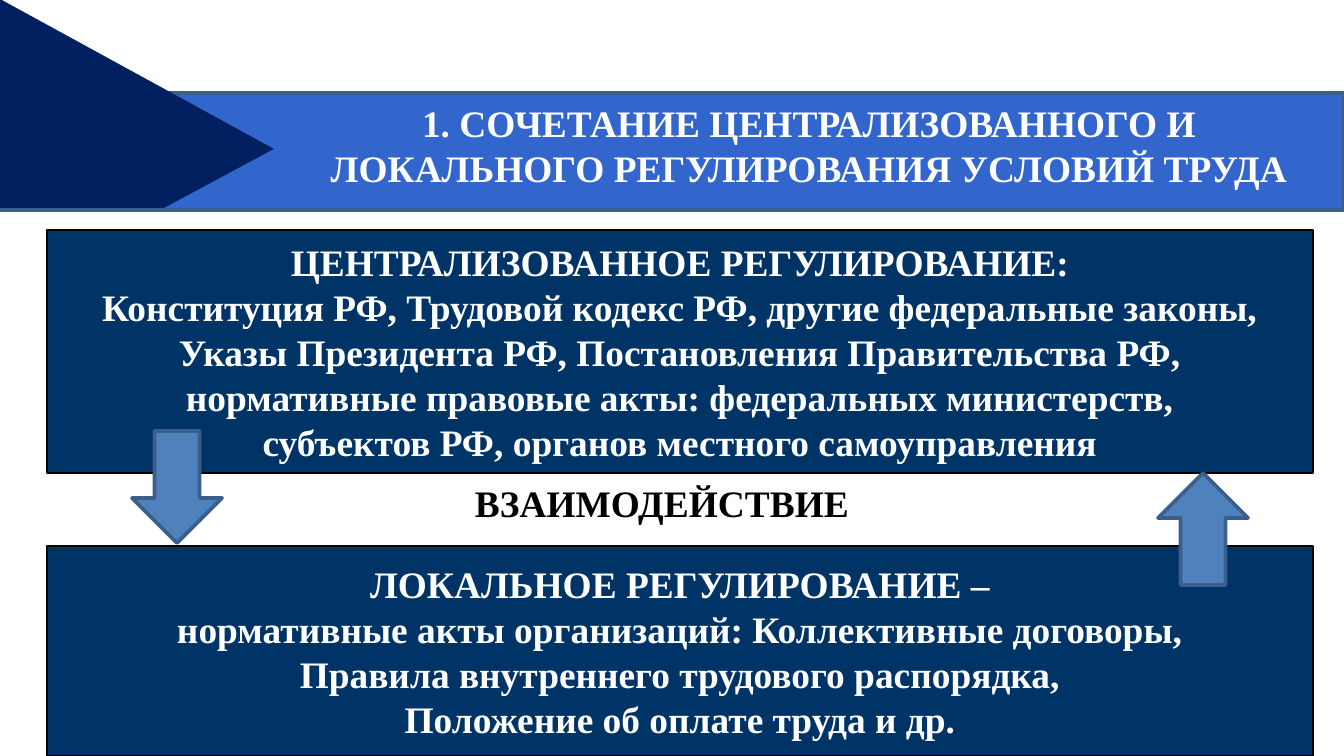
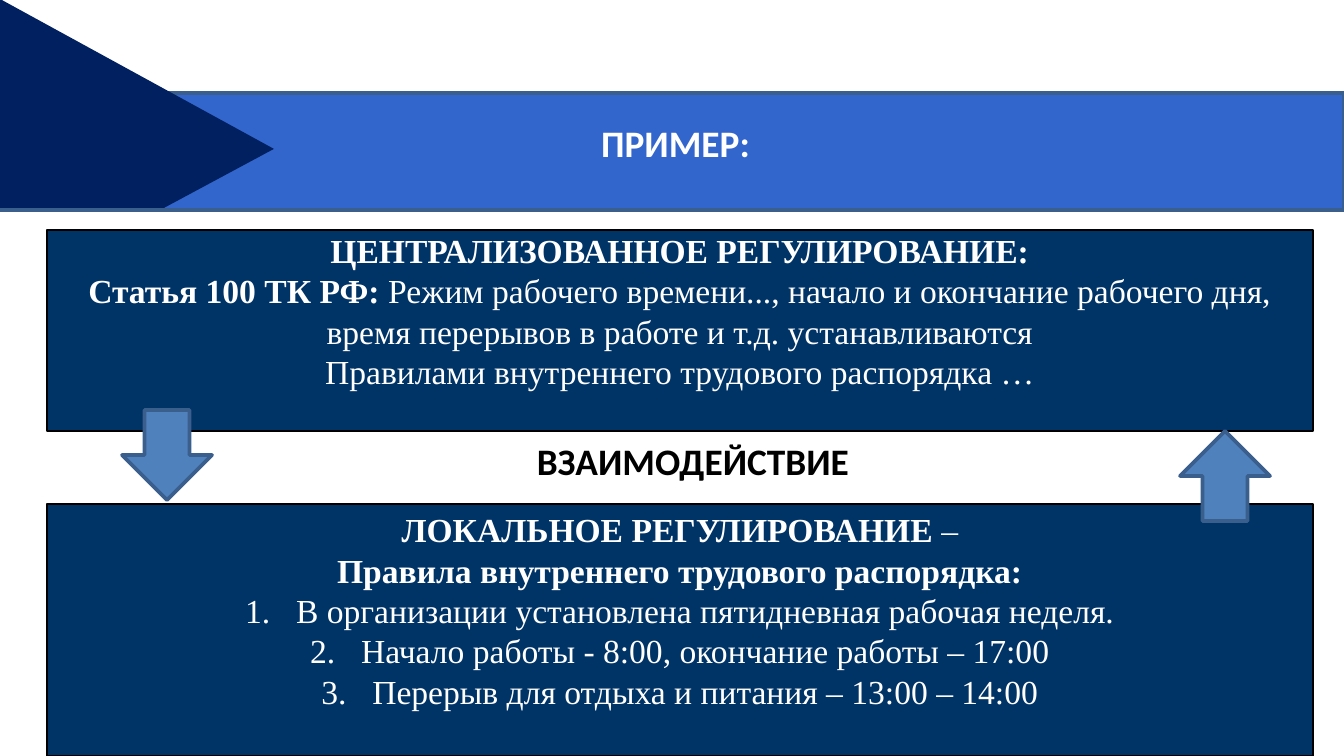
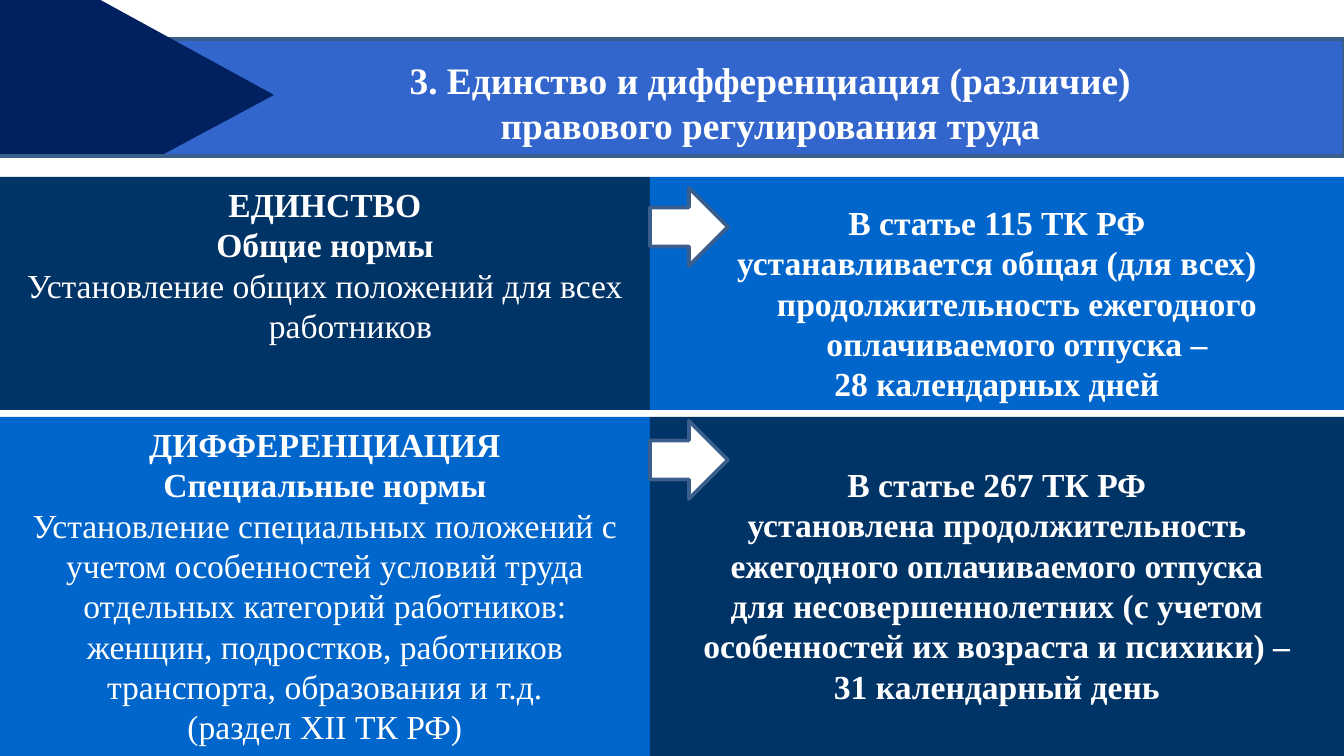
from lxml import etree
from pptx import Presentation
from pptx.dml.color import RGBColor
from pptx.enum.shapes import MSO_SHAPE
from pptx.enum.text import MSO_ANCHOR, PP_ALIGN
from pptx.oxml.ns import qn
from pptx.util import Pt

PX = 914400 / 134.4
W, H = 1344, 756

NAVY = RGBColor(0x00, 0x20, 0x60)
BAND = RGBColor(0x33, 0x66, 0xCC)
DARK = RGBColor(0x00, 0x33, 0x66)
BRIGHT = RGBColor(0x00, 0x66, 0xCC)
ARROW = RGBColor(0x4F, 0x81, 0xBD)
EDGE = RGBColor(0x3A, 0x5F, 0x8C)
WHITE = RGBColor(0xFF, 0xFF, 0xFF)
BLACK = RGBColor(0x00, 0x00, 0x00)

SERIF, SANS = "Times New Roman", "Calibri"
RECT = MSO_SHAPE.RECTANGLE
DOWN, UP, RIGHT = MSO_SHAPE.DOWN_ARROW, MSO_SHAPE.UP_ARROW, MSO_SHAPE.RIGHT_ARROW
CENTER = PP_ALIGN.CENTER
TOP, MIDDLE = MSO_ANCHOR.TOP, MSO_ANCHOR.MIDDLE


def box(s, kind, at, fill=None, line=None, width=2):
    """Add a preset shape, or a text box when kind is None."""
    at = [round(v * PX) for v in at]
    if kind is None:
        return s.shapes.add_textbox(*at)
    sp = s.shapes.add_shape(kind, *at)
    sp.shadow.inherit = False
    sp.fill.solid()
    sp.fill.fore_color.rgb = fill
    if line is None:
        sp.line.fill.background()
    else:
        sp.line.color.rgb = line
        sp.line.width = Pt(width)
    return sp


def write(sp, paras, size=20, font=SERIF, color=WHITE, anchor=TOP, wrap=True,
          hang=0, top=7, bottom=7):
    """Each paragraph is a list of (text, bold) runs; "1." first numbers it."""
    tf = sp.text_frame
    frame = {"word_wrap": wrap, "vertical_anchor": anchor,
             "margin_top": round(top * PX), "margin_bottom": round(bottom * PX)}
    for name, value in frame.items():
        setattr(tf, name, value)
    for i, runs in enumerate(paras):
        p = tf.paragraphs[0] if i == 0 else tf.add_paragraph()
        p.alignment = CENTER
        pPr = p._p.get_or_add_pPr()
        if hang:
            pPr.set("marL", str(round(hang * PX)))
            pPr.set("indent", str(round(-hang * PX)))
        if runs[0] == "1.":
            etree.SubElement(pPr, qn("a:buAutoNum"), type="arabicPeriod")
            runs = runs[1:]
        for text, bold in runs:
            r = p.add_run()
            r.text = text
            for name, value in {"name": font, "size": Pt(size), "bold": bold}.items():
                setattr(r.font, name, value)
            r.font.color.rgb = color


prs = Presentation()
prs.slide_width, prs.slide_height = round(W * PX), round(H * PX)

# Shared header: blue band with a navy wedge
slides = []
for y in (93, 93, 39):
    s = prs.slides.add_slide(prs.slide_layouts[6])
    box(s, RECT, (0, y, W, 117), BAND, EDGE)
    wedge = s.shapes.build_freeform(0, y - 94, scale=PX)
    wedge.add_line_segments([(274, y + 56), (164, y + 115), (0, y + 115)])
    sp = wedge.convert_to_shape()
    sp.shadow.inherit = False
    sp.fill.solid()
    sp.fill.fore_color.rgb = NAVY
    sp.line.fill.background()
    slides.append(s)

# Slides 1 and 2: central and local regulation, with arrows between them
regulation = [
    {
        "title": "1. СОЧЕТАНИЕ ЦЕНТРАЛИЗОВАННОГО И ЛОКАЛЬНОГО РЕГУЛИРОВАНИЯ УСЛОВИЙ ТРУДА",
        "title_at": (312, 93, 994, 103), "title_wrap": True, "font": SERIF,
        "size": 20, "margins": (7, 7), "hang": 0,
        "central": (230, 243, [
            [("ЦЕНТРАЛИЗОВАННОЕ РЕГУЛИРОВАНИЕ:", True)],
            [("Конституция РФ, Трудовой кодекс РФ, другие федеральные законы,", True)],
            [("Указы Президента РФ, Постановления Правительства РФ,", True)],
            [("нормативные правовые акты: федеральных министерств,", True)],
            [("субъектов РФ, органов местного самоуправления", True)],
        ]),
        "local": (546, 210, [
            [("ЛОКАЛЬНОЕ РЕГУЛИРОВАНИЕ –", True)],
            [("нормативные акты организаций: Коллективные договоры,", True)],
            [("Правила внутреннего трудового распорядка,", True)],
            [("Положение об оплате труда и др.", True)],
        ]),
        "link_x": 365, "down": (132, 431), "up": (1158, 473), "arrow_h": 112,
    },
    {
        "title": "ПРИМЕР:",
        "title_at": (587, 113, 177, 59), "title_wrap": False, "font": SANS,
        "size": 18, "margins": (0, 40), "hang": 51,
        "central": (230, 201, [
            [("ЦЕНТРАЛИЗОВАННОЕ РЕГУЛИРОВАНИЕ:", True)],
            [("Статья 100 ТК РФ: ", True),
             ("Режим рабочего времени..., начало и окончание рабочего дня,", False)],
            [("время перерывов в работе и т.д. устанавливаются", False)],
            [("Правилами внутреннего трудового распорядка …", False)],
        ]),
        "local": (504, 252, [
            [("ЛОКАЛЬНОЕ РЕГУЛИРОВАНИЕ", True), (" –", False)],
            [("Правила внутреннего трудового распорядка:", True)],
            ["1.", ("В организации установлена пятидневная рабочая неделя.", False)],
            ["1.", ("Начало работы - 8:00, окончание работы – 17:00", False)],
            ["1.", ("Перерыв для отдыха и питания – 13:00 – 14:00", False)],
        ]),
        "link_x": 396, "down": (122, 410), "up": (1180, 431), "arrow_h": 90,
    },
]
for s, d in zip(slides, regulation):
    write(box(s, None, d["title_at"]), [[(d["title"], True)]],
          font=d["font"], wrap=d["title_wrap"])
    for part, hang in (("central", 0), ("local", d["hang"])):
        y, h, paras = d[part]
        sp = box(s, RECT, (47, y, 1266, h), DARK, BLACK, 0.75)
        write(sp, paras, d["size"], anchor=MIDDLE, wrap=False, hang=hang,
              top=d["margins"][0], bottom=d["margins"][1])
    y, h, _ = d["central"]
    write(box(s, None, (d["link_x"], y + h, 594, 59)), [[("ВЗАИМОДЕЙСТВИЕ", True)]],
          font=d["font"], color=BLACK)
    for kind, part in ((DOWN, "down"), (UP, "up")):
        box(s, kind, (*d[part], 90, d["arrow_h"]), ARROW, EDGE)

# Slide 3: title, first line set off to the left
s = slides[2]
sp = box(s, None, (312, 50, 973, 103))
write(sp, [[("3. Единство и дифференциация (различие)", True)],
           [("правового регулирования труда", True)]], hang=40)
sp.text_frame.paragraphs[0]._p.get_or_add_pPr().set("marR", str(round(56 * PX)))

# Slide 3: two by two panels, with an arrow in each row
SPLIT = 650
panels = [
    (0, 177, 233, DARK, 51, 7, [
        [("ЕДИНСТВО", True)],
        [("Общие нормы", True)],
        [("Установление общих положений для всех работников", False)],
    ]),
    (SPLIT, 177, 233, BRIGHT, 40, 25, [
        [("В статье 115 ТК РФ", True)],
        [("устанавливается общая (для всех) продолжительность ежегодного "
          "оплачиваемого отпуска –", True)],
        [("28 календарных дней", True)],
    ]),
    (0, 417, 339, BRIGHT, 0, 7, [
        [("ДИФФЕРЕНЦИАЦИЯ", True)],
        [("Специальные нормы", True)],
        [("Установление специальных положений с учетом особенностей условий труда "
          "отдельных категорий работников:", False)],
        [("женщин, подростков, работников транспорта, образования и т.д.", False)],
        [("(раздел XII ТК РФ)", False)],
    ]),
    (SPLIT, 417, 339, DARK, 0, 47, [
        [("В статье 267 ТК РФ", True)],
        [("установлена продолжительность ежегодного оплачиваемого отпуска", True)],
        [("для несовершеннолетних (с учетом особенностей их возраста и психики) –", True)],
        [("31 календарный день", True)],
    ]),
]
for x, y, h, fill, hang, top, paras in panels:
    w = W - SPLIT if x else SPLIT
    write(box(s, RECT, (x, y, w, h), fill), paras, 18, hang=hang, top=top)
for y in (188, 421):
    box(s, RIGHT, (SPLIT, y, 78, 78), WHITE, EDGE)

prs.save("out.pptx")
